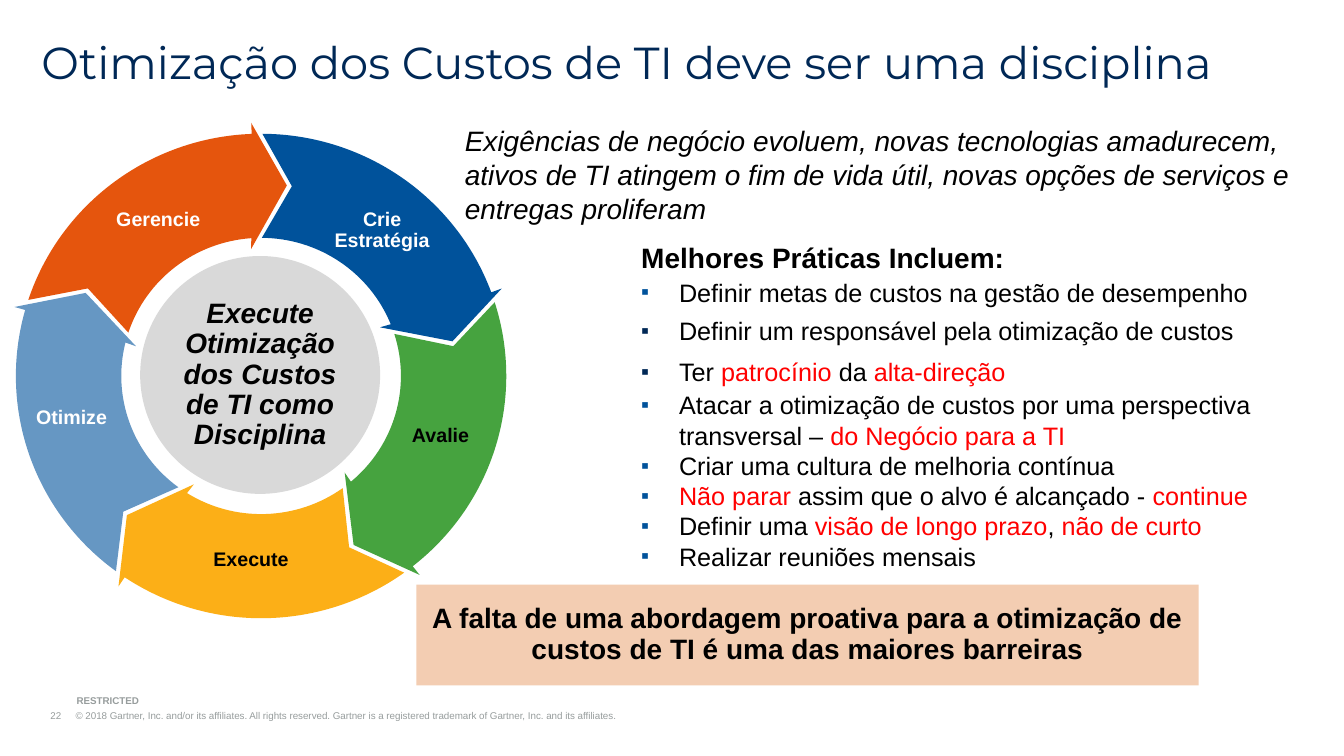
from math import cos, radians, sin, tan

from lxml import etree
from pptx import Presentation
from pptx.dml.color import RGBColor
from pptx.enum.shapes import MSO_SHAPE
from pptx.enum.text import MSO_ANCHOR, PP_ALIGN
from pptx.oxml.ns import qn
from pptx.util import Inches, Pt

BLACK = RGBColor(0x00, 0x00, 0x00)
WHITE = RGBColor(0xFF, 0xFF, 0xFF)
RED = RGBColor(0xFF, 0x00, 0x00)
NAVY = RGBColor(0x00, 0x28, 0x56)
BLUE = RGBColor(0x00, 0x52, 0x9B)
GREEN = RGBColor(0x46, 0xA3, 0x3F)
YELLOW = RGBColor(0xFC, 0xAF, 0x17)
SKY = RGBColor(0x66, 0x97, 0xC3)
ORANGE = RGBColor(0xE5, 0x55, 0x0D)
GRAY = RGBColor(0xD9, 0xD9, 0xD9)
FOOTER_GRAY = RGBColor(0x97, 0x9D, 0x9D)
PEACH = RGBColor(0xF3, 0xCD, 0xB2)

STAGES = [
    ("Crie Estratégia", BLUE, WHITE, 1.2, -1.44, 1.2, 0.6),
    ("Avalie", GREEN, BLACK, 1.78, 0.6, 1.05, 0.4),
    ("Execute", YELLOW, BLACK, -0.1, 1.83, 1.05, 0.4),
    ("Otimize", SKY, WHITE, -1.88, 0.42, 1.05, 0.4),
    ("Gerencie", ORANGE, WHITE, -1.02, -1.55, 1.05, 0.4),
]
PRACTICES = [
    ("Definir metas de custos na gestão de desempenho", BLUE, False),
    ("Definir um responsável pela otimização de custos", NAVY, True),
    ("Ter *patrocínio *da *alta-direção", NAVY, True),
    ("Atacar a otimização de custos por uma perspectiva transversal – "
     "*do Negócio para a TI", BLUE, False),
    ("Criar uma cultura de melhoria contínua", BLUE, False),
    ("*Não parar *assim que o alvo é alcançado - *continue", BLUE, False),
    ("Definir uma *visão de longo prazo*, *não de curto", BLUE, False),
    ("Realizar reuniões mensais", BLUE, False),
]


def style(r, size, color, bold=False, italic=False, name="Arial"):
    """Format one run."""
    r.font.name = name
    r.font.size = Pt(size)
    r.font.bold = bold
    r.font.italic = italic
    r.font.color.rgb = color


def set_text(sp, text, size, color, align=PP_ALIGN.LEFT, anchor=MSO_ANCHOR.TOP,
             spacing=None, inset=0, **font):
    """Fill a shape with one formatted paragraph and return it."""
    tf = sp.text_frame
    tf.word_wrap = True
    tf.vertical_anchor = anchor
    tf.margin_left = tf.margin_right = Inches(inset)
    tf.margin_top = tf.margin_bottom = Inches(inset)
    p = tf.paragraphs[0]
    p.text = text
    p.alignment = align
    p.line_spacing = spacing
    style(p.runs[0], size, color, **font)
    return p


def add_text(s, box, text, size, color, **kwargs):
    """Add a text box at left, top, width, height and return its paragraph."""
    sp = s.shapes.add_textbox(*map(Inches, box))
    return set_text(sp, text, size, color, **kwargs)


def paint(sp, color):
    """Give a shape a plain fill without line or shadow."""
    sp.shadow.inherit = False
    sp.fill.solid()
    sp.fill.fore_color.rgb = color
    sp.line.fill.background()


def add_element(parent, tag, **attributes):
    """Append a drawing element and return it."""
    return etree.SubElement(parent, qn(tag), **attributes)


def hang(p, indent):
    """Give a paragraph a hanging indent and return its properties."""
    pPr = p._p.get_or_add_pPr()
    pPr.set("marL", str(Inches(indent)))
    pPr.set("indent", str(-Inches(indent)))
    return pPr


def ring_point(cx, cy, r, angle, pull=0):
    """Return a point of the ring, moved along its tangent by a share of r."""
    a = radians(angle)
    return (Inches(cx + 1.005 * r * (sin(a) + pull * cos(a))),
            Inches(cy - 0.993 * r * (cos(a) - pull * sin(a))))


def add_arrow(s, cx, cy, start, color):
    """Draw one curved arrow of the ring, starting at an angle from the top."""
    inner, middle, outer = 1.38, 1.92, 2.42
    first, last = start + 0.3, start + 69.8
    quarters = [q for q in (270, 180, 90) if first < q < last]
    corners = [(inner, first), (inner, start + 68), (1.27, start + 67.5),
               (middle, start + 79.6), (2.53, last), (outer, last)]
    corners += [(outer, q) for q in quarters]
    corners += [(outer, first), (middle, start + 9.1)]
    points = [ring_point(cx, cy, *corner) for corner in corners]
    builder = s.shapes.build_freeform(*points[0], scale=1.0)
    builder.add_line_segments(points[1:], close=True)
    sp = builder.convert_to_shape()
    paint(sp, color)
    lines = list(sp._element.iter(qn("a:lnTo")))
    for (r0, a0), (r1, a1), end, line in zip(corners, corners[1:], points[1:], lines):
        if r0 == r1:
            pull = 4 / 3 * tan(radians(a1 - a0) / 4)
            curve = etree.Element(qn("a:cubicBezTo"))
            for x, y in (ring_point(cx, cy, r0, a0, pull),
                         ring_point(cx, cy, r1, a1, -pull), end):
                add_element(curve, "a:pt", x=str(x - sp.left), y=str(y - sp.top))
            line.getparent().replace(line, curve)


def add_cycle(s, cx, cy):
    """Draw the ring of stages around its centre circle."""
    w, h = 2.38, 2.36
    sp = s.shapes.add_shape(MSO_SHAPE.OVAL, Inches(cx - w / 2 - 0.01),
                            Inches(cy - h / 2 - 0.01), Inches(w), Inches(h))
    paint(sp, GRAY)
    set_text(sp, "Execute Otimização dos Custos de TI como Disciplina", 20, BLACK,
             align=PP_ALIGN.CENTER, anchor=MSO_ANCHOR.MIDDLE, spacing=0.9,
             bold=True, italic=True)
    for i, (_, fill, *_) in enumerate(STAGES):
        add_arrow(s, cx, cy, i * 360 / len(STAGES), fill)
    for label, _, color, dx, dy, w, h in STAGES:
        add_text(s, (cx + dx - w / 2, cy + dy - h / 2, w, h), label, 14, color,
                 align=PP_ALIGN.CENTER, anchor=MSO_ANCHOR.MIDDLE, spacing=0.9,
                 inset=0.1, bold=True)


def add_practices(s, left, top, width, height):
    """Write the heading and the bulleted practices."""
    sp = s.shapes.add_textbox(*map(Inches, (left, top, width, height)))
    p = set_text(sp, "Melhores Práticas Incluem:", 20, BLACK, spacing=0.9, bold=True)
    p.space_after = Pt(2)
    tf = sp.text_frame
    tf.margin_top = tf.margin_bottom = Inches(0.05)
    tf.margin_right = Inches(0.1)
    for text, bullet, spaced in PRACTICES:
        p = tf.add_paragraph()
        pPr = hang(p, 3 / 8)
        add_element(add_element(pPr, "a:buClr"), "a:srgbClr", val=str(bullet))
        add_element(pPr, "a:buSzPct", val="90000")
        add_element(pPr, "a:buFont", typeface="Arial")
        add_element(pPr, "a:buChar", char="▪")
        if spaced:
            p.line_spacing = 0.9
            p.space_before = Pt(8)
            p.space_after = Pt(2)
        for i, part in enumerate(text.split("*")):
            if part:
                r = p.add_run()
                r.text = part
                style(r, 18, RED if i % 2 else BLACK)


def add_callout(s, left, top, width, height):
    """Draw the closing message on its coloured panel."""
    sp = s.shapes.add_shape(MSO_SHAPE.RECTANGLE,
                            *map(Inches, (left, top, width, height)))
    paint(sp, PEACH)
    set_text(sp, "A falta de uma abordagem proativa para a otimização de custos "
             "de TI é uma das maiores barreiras", 20, BLACK, align=PP_ALIGN.CENTER,
             anchor=MSO_ANCHOR.MIDDLE, spacing=0.9, inset=0.1, bold=True)


def add_footer(s, left, top, width):
    """Write the classification and the numbered copyright line."""
    add_text(s, (left + 0.26, top, 2.53, 0.12), "RESTRICTED", 7, FOOTER_GRAY,
             anchor=MSO_ANCHOR.BOTTOM, bold=True)
    p = add_text(s, (left, top + 0.15, width, 0.12),
                 "22\t© 2018 Gartner, Inc. and/or its affiliates. All rights reserved. "
                 "Gartner is a registered trademark of Gartner, Inc. and its affiliates.",
                 7, FOOTER_GRAY, anchor=MSO_ANCHOR.BOTTOM)
    tabs = add_element(hang(p, 0.25), "a:tabLst")
    add_element(tabs, "a:tab", pos=str(Inches(0.25)), algn="l")


def main():
    """Build the slide and save it."""
    prs = Presentation()
    prs.slide_width, prs.slide_height = Inches(13.33), Inches(7.5)
    s = prs.slides.add_slide(prs.slide_layouts[6])
    add_footer(s, 0.5, 6.89, 7.99)
    add_text(s, (0.41, 0.4, 12.92, 0.48),
             "Otimização dos Custos de TI deve ser uma disciplina",
             32, NAVY, spacing=0.9, name="Montserrat")
    add_cycle(s, 2.59, 3.73)
    add_text(s, (4.61, 1.23, 8.29, 1.01),
             "Exigências de negócio evoluem, novas tecnologias amadurecem, ativos de "
             "TI atingem o fim de vida útil, novas opções de serviços e entregas "
             "proliferam", 20, BLACK, italic=True)
    add_practices(s, 6.36, 2.37, 6.7, 3.38)
    add_callout(s, 4.13, 5.8, 7.76, 1)
    prs.save("out.pptx")


if __name__ == "__main__":
    main()
